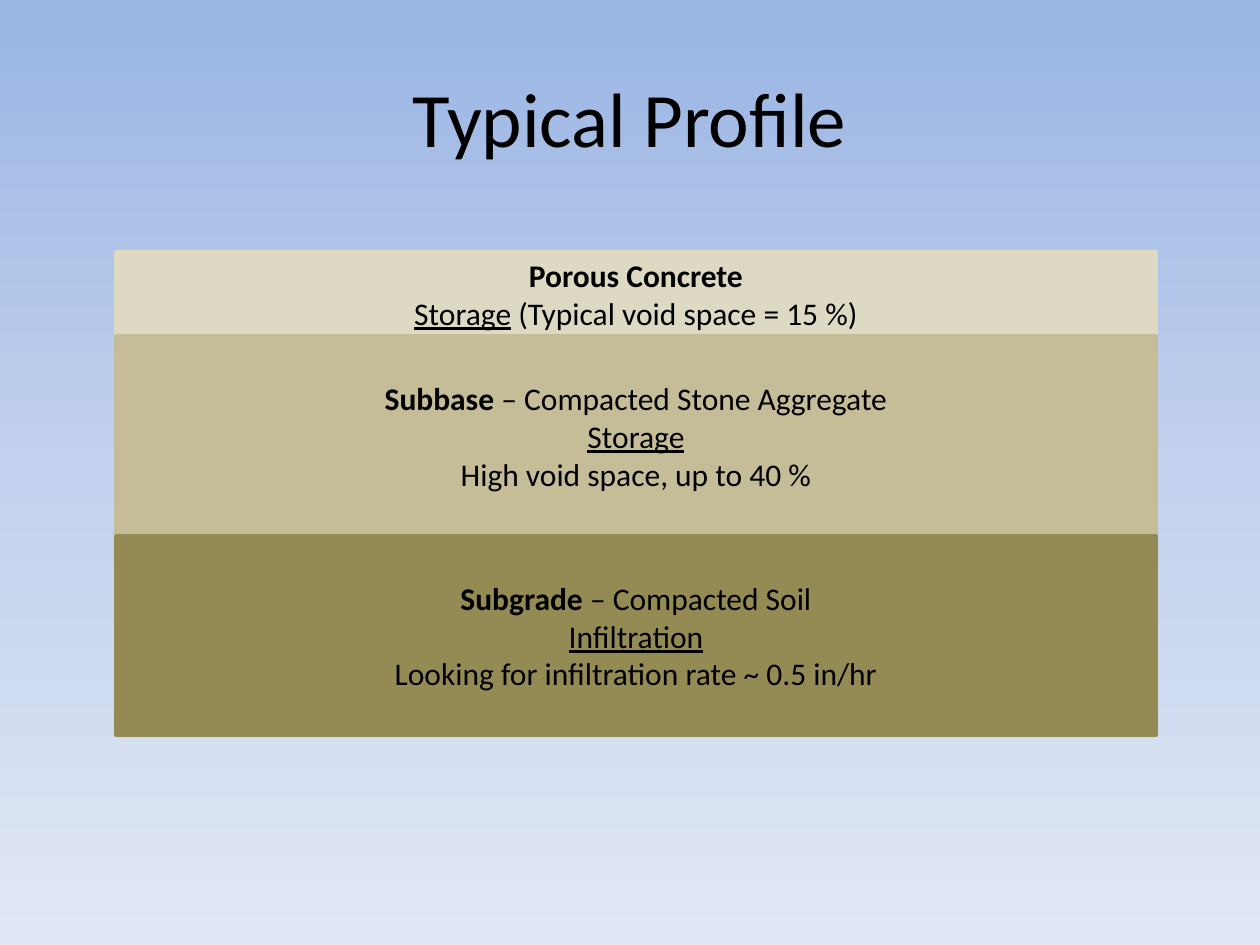
import copy
from dataclasses import dataclass

import pptx
import pptx.dml.color
import pptx.enum.shapes
import pptx.enum.text
import pptx.util

EMU_PER_PX = 914400 / 126
FONT = "Calibri"
BLACK = "000000"
BAND_LEFT, BAND_TOP, BAND_WIDTH = 116, 252, 1040
BACKGROUND_STOPS = [(0, "9AB5E4"), (0.5, "C2D1ED"), (1, "E1E8F5")]


@dataclass
class Span:
    text: str
    bold: bool = False
    underline: bool = False


@dataclass
class Layer:
    height: int
    color: str
    lines: list[list[Span]]


LAYERS = [
    Layer(84, "DDD9C3", [
        [Span("Porous Concrete", bold=True)],
        [Span("Storage", underline=True), Span(" (Typical void space = 15 %)")],
    ]),
    Layer(200, "C4BD97", [
        [Span("Subbase", bold=True), Span(" – Compacted Stone Aggregate")],
        [Span("Storage", underline=True)],
        [Span("High void space, up to 40 %")],
    ]),
    Layer(199, "948A54", [
        [Span("Subgrade", bold=True), Span(" – Compacted Soil")],
        [Span("Infiltration", underline=True)],
        [Span("Looking for infiltration rate ~ 0.5 in/hr")],
    ]),
]


def px(n: int) -> int:
    return round(n * EMU_PER_PX)


def rgb(color: str) -> pptx.dml.color.RGBColor:
    return pptx.dml.color.RGBColor.from_string(color)


def format_paragraph(p, size: int) -> None:
    p.alignment = pptx.enum.text.PP_ALIGN.CENTER
    p.font.name = FONT
    p.font.size = pptx.util.Pt(size)
    p.font.color.rgb = rgb(BLACK)


def set_background(s) -> None:
    fill = s.background.fill
    fill.gradient()
    fill.gradient_angle = 270
    # A new gradient has two stops; add the middle one
    stop_list = s.element.xpath(".//a:gsLst")[0]
    stop_list.insert(1, copy.deepcopy(stop_list[0]))
    for stop, (position, color) in zip(fill.gradient_stops, BACKGROUND_STOPS):
        stop.position = position
        stop.color.rgb = rgb(color)


def set_title(s, text: str) -> None:
    title = s.shapes.title
    title.left, title.top, title.width, title.height = map(px, (63, 38, 1134, 157))
    tf = title.text_frame
    tf.text = text
    tf.vertical_anchor = pptx.enum.text.MSO_ANCHOR.MIDDLE
    format_paragraph(tf.paragraphs[0], 44)


def draw_layer(s, layer: Layer, top: int) -> None:
    sp = s.shapes.add_shape(
        pptx.enum.shapes.MSO_SHAPE.RECTANGLE,
        px(BAND_LEFT), px(top), px(BAND_WIDTH), px(layer.height))
    sp.shadow.inherit = False
    sp.fill.solid()
    sp.fill.fore_color.rgb = rgb(layer.color)
    sp.line.color.rgb = rgb(layer.color)
    sp.line.width = pptx.util.Pt(2)

    tf = sp.text_frame
    tf.word_wrap = True
    tf.vertical_anchor = pptx.enum.text.MSO_ANCHOR.MIDDLE
    for i, line in enumerate(layer.lines):
        p = tf.add_paragraph() if i else tf.paragraphs[0]
        format_paragraph(p, 18)
        for span in line:
            r = p.add_run()
            r.text = span.text
            r.font.bold = span.bold
            r.font.underline = span.underline


def main() -> None:
    prs = pptx.Presentation()
    prs.slide_width, prs.slide_height = px(1260), px(945)
    s = prs.slides.add_slide(prs.slide_layouts[5])
    set_background(s)
    set_title(s, "Typical Profile")

    # Pavement layers, stacked from the surface down
    top = BAND_TOP
    for layer in LAYERS:
        draw_layer(s, layer, top)
        top += layer.height

    prs.save("out.pptx")


if __name__ == "__main__":
    main()
